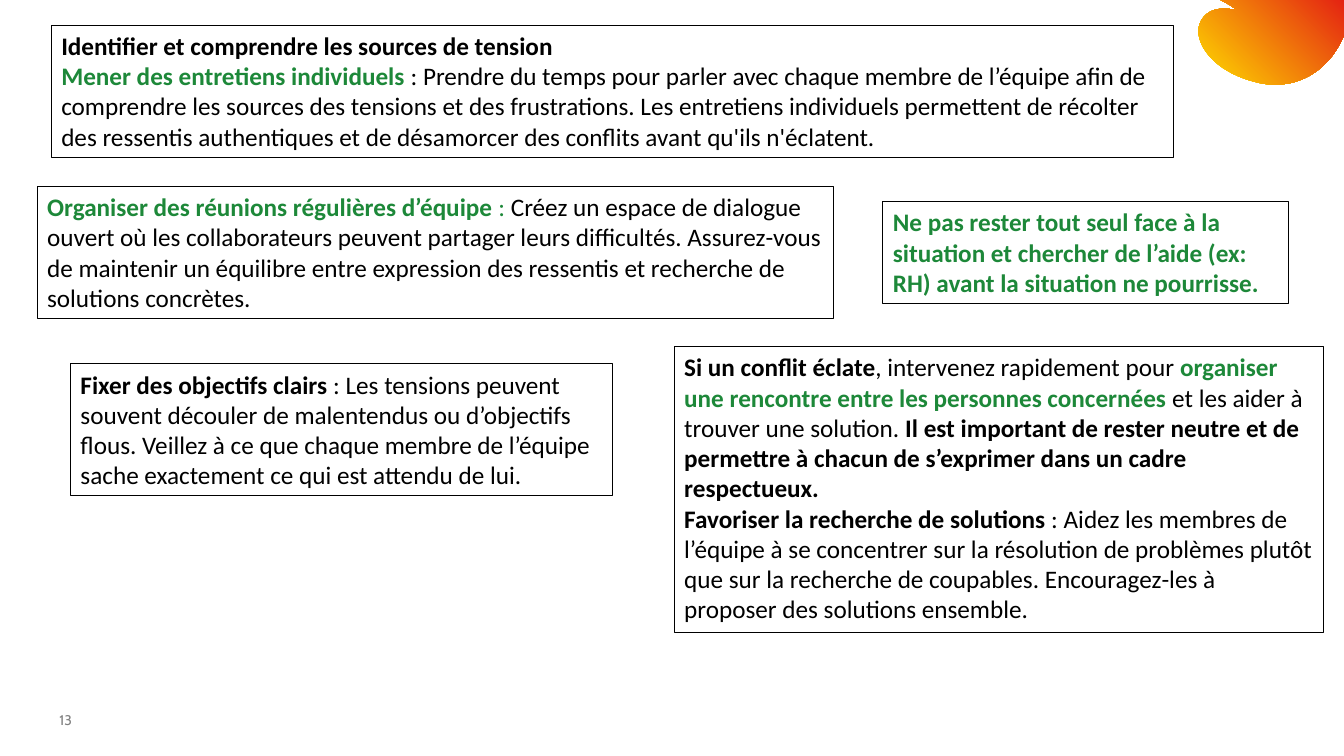
from dataclasses import dataclass

from pptx import Presentation
from pptx.dml.color import RGBColor
from pptx.enum.text import MSO_ANCHOR, MSO_AUTO_SIZE
from pptx.slide import Slide
from pptx.text.text import _Paragraph
from pptx.util import Pt

ANCHOR_BOTTOM = MSO_ANCHOR.BOTTOM
GROW_TO_TEXT = MSO_AUTO_SIZE.SHAPE_TO_FIT_TEXT
BLANK_LAYOUT = 6
CURVE_STEPS = 24

Point = tuple[float, float]


@dataclass(frozen=True)
class Theme:
    ink: RGBColor = RGBColor(0x00, 0x00, 0x00)
    green: RGBColor = RGBColor(0x1D, 0x88, 0x39)
    grey: RGBColor = RGBColor(0x80, 0x80, 0x80)
    yellow: RGBColor = RGBColor(0xFF, 0xDD, 0x00)
    red: RGBColor = RGBColor(0xE4, 0x23, 0x12)
    body_font: str = "Calibri"
    number_font: str = "Cabin"
    body_size: float = 18
    number_size: float = 10
    border: float = 0.75


THEME = Theme()


@dataclass(frozen=True)
class Span:
    text: str
    bold: bool = False
    color: RGBColor = THEME.ink
    font: str = THEME.body_font
    size: float = THEME.body_size


@dataclass(frozen=True)
class Advice:
    left: float
    top: float
    width: float
    height: float
    paragraphs: list[list[Span]]


ADVICE = [
    Advice(36.7, 18, 801.4, 94.3, [
        [Span("Identifier et comprendre les sources de tension", True)],
        [Span("Mener des entretiens individuels ", True, THEME.green),
         Span(": Prendre du temps pour parler avec chaque membre de l’équipe afin de "
              "comprendre les sources des tensions et des frustrations. Les entretiens "
              "individuels permettent de récolter des ressentis authentiques et de "
              "désamorcer des conflits avant qu'ils n'éclatent.")],
    ]),
    Advice(26.6, 133.2, 568.8, 94.3, [
        [Span("Organiser des réunions régulières d’équipe", True, THEME.green),
         Span(" : ", color=THEME.green),
         Span("Créez un espace de dialogue ouvert où les collaborateurs peuvent partager "
              "leurs difficultés. Assurez-vous de maintenir un équilibre entre expression "
              "des ressentis et recherche de solutions concrètes.")],
    ]),
    Advice(50.4, 259.9, 387.4, 94.3, [
        [Span("Fixer des objectifs clairs", True),
         Span(" : Les tensions peuvent souvent découler de malentendus ou d’objectifs "
              "flous. Veillez à ce que chaque membre de l’équipe sache exactement ce qui "
              "est attendu de lui.")],
    ]),
    Advice(481.7, 247.7, 463.7, 203.8, [
        [Span("Si un conflit éclate", True),
         Span(", intervenez rapidement pour "),
         Span("organiser une rencontre entre les personnes concernées", True, THEME.green),
         Span(" et les aider à trouver une solution. "),
         Span("Il est important de rester neutre et de permettre à chacun de s’exprimer "
              "dans un cadre respectueux.", True)],
        [Span("Favoriser la recherche de solutions", True),
         Span(" : Aidez les membres de l’équipe à se concentrer sur la résolution de "
              "problèmes plutôt que sur la recherche de coupables. Encouragez-les à "
              "proposer des solutions ensemble.")],
    ]),
    Advice(630.7, 144, 289.4, 72.7, [
        [Span("Ne pas rester tout seul face à la situation et chercher de l’aide (ex: RH) "
              "avant la situation ne pourrisse.", True, THEME.green)],
    ]),
]

BLOB_START: Point = (871.9, 0)
BLOB_CORNER: list[Point] = [(960, 0), (960, 25.2), (958.3, 28.8)]
BLOB_CURVES: list[tuple[Point, Point, Point]] = [
    ((947.5, 51.8), (923.8, 66.2), (895.7, 58.3)),
    ((860.4, 49), (848.2, 22.3), (861.1, 10.8)),
    ((866.2, 5.8), (874.1, 5), (887, 7.9)),
    ((884.2, 7.2), (881.3, 5.8), (878.4, 3.6)),
]


def curve_points(start: Point, first: Point, second: Point, end: Point) -> list[Point]:
    points = []
    for step in range(1, CURVE_STEPS + 1):
        t = step / CURVE_STEPS
        u = 1 - t
        weights = (u**3, 3 * u * u * t, 3 * u * t * t, t**3)
        corners = (start, first, second, end)
        points.append((
            sum(weight * corner[0] for weight, corner in zip(weights, corners)),
            sum(weight * corner[1] for weight, corner in zip(weights, corners)),
        ))
    return points


def add_blob(page: Slide) -> None:
    outline = list(BLOB_CORNER)
    for first, second, end in BLOB_CURVES:
        outline += curve_points(outline[-1], first, second, end)
    builder = page.shapes.build_freeform(Pt(BLOB_START[0]), Pt(BLOB_START[1]))
    builder.add_line_segments([(Pt(x), Pt(y)) for x, y in outline], close=True)
    blob = builder.convert_to_shape()
    blob.shadow.inherit = False
    blob.line.fill.background()
    blob.fill.gradient()
    blob.fill.gradient_angle = 45
    for stop, color, position in zip(
        blob.fill.gradient_stops, (THEME.yellow, THEME.red), (0, 1)
    ):
        stop.color.rgb = color
        stop.position = position


def add_span(para: _Paragraph, span: Span) -> None:
    run = para.add_run()
    run.text = span.text
    run.font.name = span.font
    run.font.size = Pt(span.size)
    run.font.bold = span.bold
    run.font.color.rgb = span.color


def add_advice(page: Slide, advice: Advice) -> None:
    box = page.shapes.add_textbox(
        Pt(advice.left), Pt(advice.top), Pt(advice.width), Pt(advice.height)
    )
    box.line.color.rgb = THEME.ink
    box.line.width = Pt(THEME.border)
    frame = box.text_frame
    frame.word_wrap = True
    frame.auto_size = GROW_TO_TEXT
    for index, spans in enumerate(advice.paragraphs):
        para = frame.add_paragraph() if index else frame.paragraphs[0]
        for span in spans:
            add_span(para, span)


def add_page_number(page: Slide, number: str) -> None:
    box = page.shapes.add_textbox(Pt(42.5), Pt(510.5), Pt(56.9), Pt(10.1))
    frame = box.text_frame
    frame.word_wrap = True
    frame.vertical_anchor = ANCHOR_BOTTOM
    frame.margin_left = frame.margin_right = frame.margin_top = frame.margin_bottom = 0
    add_span(
        frame.paragraphs[0],
        Span(number, color=THEME.grey, font=THEME.number_font, size=THEME.number_size),
    )


def main() -> None:
    deck = Presentation()
    deck.slide_width = Pt(960)
    deck.slide_height = Pt(540)
    page = deck.slides.add_slide(deck.slide_layouts[BLANK_LAYOUT])
    add_blob(page)
    add_page_number(page, "13")
    for advice in ADVICE:
        add_advice(page, advice)
    deck.save("out.pptx")


if __name__ == "__main__":
    main()
